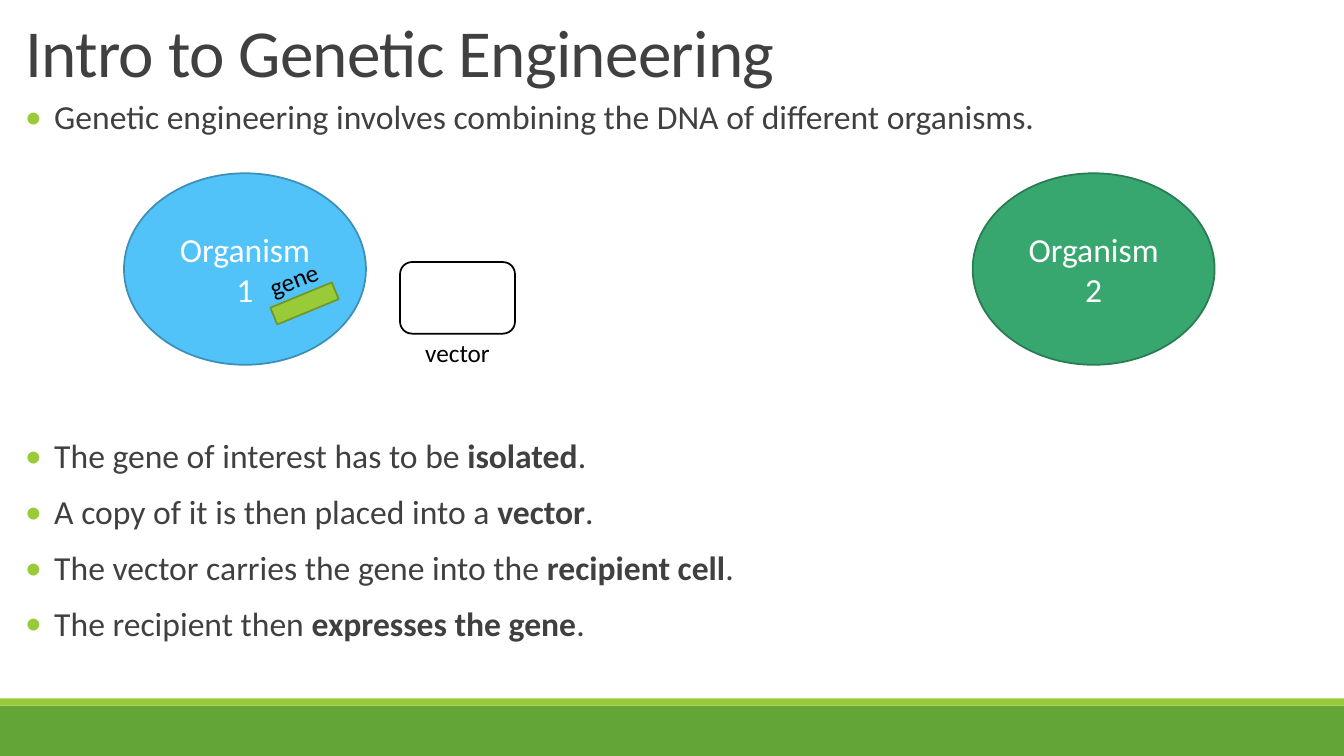
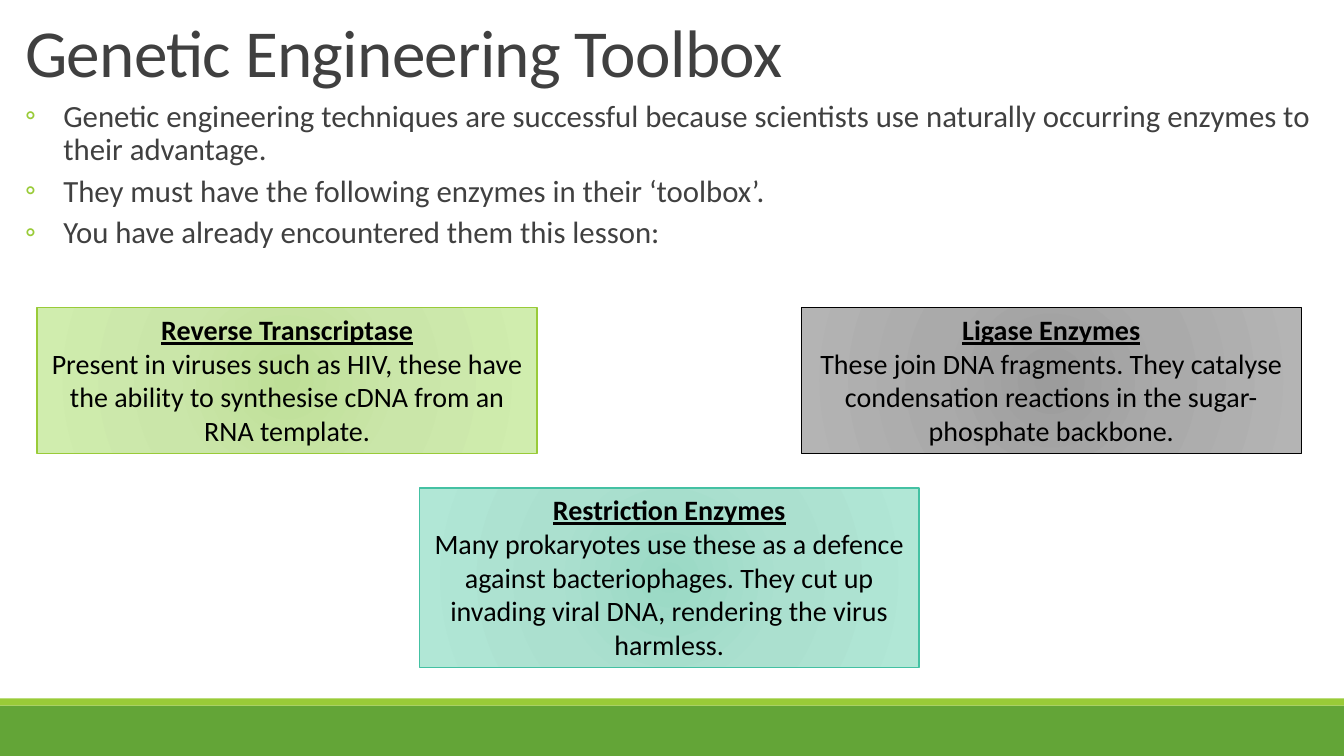
from dataclasses import dataclass

from pptx import Presentation
from pptx.dml.color import RGBColor as RGB
from pptx.enum.shapes import MSO_SHAPE as SHAPE
from pptx.enum.text import MSO_ANCHOR as ANCHOR, MSO_AUTO_SIZE as FIT, PP_ALIGN as ALIGN
from pptx.oxml import parse_xml
from pptx.oxml.ns import nsdecls
from pptx.util import Pt


@dataclass(frozen=True)
class Theme:
    font: str = "Calibri"
    ink: str = "404040"
    black: str = "000000"
    white: str = "FFFFFF"
    lime: str = "99CB38"
    lime_edge: str = "719629"
    green: str = "63A537"
    blue: str = "51C3F9"
    blue_edge: str = "3C90B8"
    emerald: str = "37A76F"
    emerald_edge: str = "297C52"
    teal: str = "44C1A3"
    title_size: int = 48
    body_size: int = 24
    sub_size: int = 22
    card_size: int = 20
    label_size: int = 18


THEME = Theme()
LEFT, WIDTH, BODY_TOP = 10.8, 933.8, 68.4


def add_run(paragraph, text, size, color, bold=False):
    run = paragraph.add_run()
    run.text = text
    run.font.name = THEME.font
    run.font.size = Pt(size)
    run.font.bold = bold
    run.font.color.rgb = RGB.from_string(color)
    return run


def add_box(shapes, kind, box, fill=None, edge=None, weight=1.25):
    shape = shapes.add_shape(kind, *map(Pt, box))
    shape.shadow.inherit = False
    if fill:
        shape.fill.solid()
        shape.fill.fore_color.rgb = RGB.from_string(fill)
    if edge:
        shape.line.color.rgb = RGB.from_string(edge)
        shape.line.width = Pt(weight)
    else:
        shape.line.fill.background()
    return shape


deck = Presentation()
deck.slide_width, deck.slide_height = Pt(960), Pt(540)
title_only = deck.slide_layouts[5]

# Shared title and footer bands
for heading in ("Intro to Genetic Engineering", "Genetic Engineering Toolbox"):
    slide = deck.slides.add_slide(title_only)
    add_box(slide.shapes, SHAPE.RECTANGLE, (0, 504, 960, 36), THEME.green)
    add_box(slide.shapes, SHAPE.RECTANGLE, (0, 498.9, 960, 5.1), THEME.lime)
    title = slide.shapes.title
    title.left, title.top, title.width, title.height = map(Pt, (LEFT, 13.7, WIDTH, 54))
    title.text_frame.auto_size = FIT.NONE
    title.text_frame.vertical_anchor = ANCHOR.MIDDLE
    line = title.text_frame.paragraphs[0]
    line.alignment = ALIGN.LEFT
    line.line_spacing = 0.85
    run = add_run(line, heading, THEME.title_size, THEME.ink)
    run.font._element.set("spc", "-50")

intro, toolbox = deck.slides

# Bullet lists: slide, top, height, size, bullet, indent, space before, after, items
# Every second part of an item is bold
bullet_lists = [
    (intro, BODY_TOP, 40, THEME.body_size, "•", 20.9, 12, 2, [
        ("Genetic engineering involves combining the DNA of different organisms.",),
    ]),
    (intro, 310.5, 170, THEME.body_size, "•", 20.9, 12, 2, [
        ("The gene of interest has to be ", "isolated", "."),
        ("A copy of it is then placed into a ", "vector", "."),
        ("The vector carries the gene into the ", "recipient cell", "."),
        ("The recipient then ", "expresses the gene", "."),
    ]),
    (toolbox, BODY_TOP, 130, THEME.sub_size, "◦", 27.4, 2, 4, [
        ("Genetic engineering techniques are successful because scientists use "
         "naturally occurring enzymes to their advantage.",),
        ("They must have the following enzymes in their ‘toolbox’.",),
        ("You have already encountered them this lesson:",),
    ]),
]
for slide, top, height, size, bullet, indent, before, after, items in bullet_lists:
    frame = slide.shapes.add_textbox(*map(Pt, (LEFT, top, WIDTH, height))).text_frame
    frame.word_wrap = True
    for number, parts in enumerate(items):
        item = frame.add_paragraph() if number else frame.paragraphs[0]
        item.line_spacing = 0.9
        item.space_before, item.space_after = Pt(before), Pt(after)
        props = item._p.get_or_add_pPr()
        props.set("marL", str(Pt(indent)))
        props.set("indent", str(-Pt(indent)))
        props.append(parse_xml(
            f'<a:buClr {nsdecls("a")}><a:srgbClr val="{THEME.lime}"/></a:buClr>'))
        props.append(parse_xml(f'<a:buFont {nsdecls("a")} typeface="{THEME.font}"/>'))
        props.append(parse_xml(f'<a:buChar {nsdecls("a")} char="{bullet}"/>'))
        for index, text in enumerate(parts):
            add_run(item, text, size, THEME.ink, bold=index % 2 == 1)

# Organisms
for name, left, fill, edge in (
    ("Organism 1", 88.6, THEME.blue, THEME.blue_edge),
    ("Organism 2", 694.8, THEME.emerald, THEME.emerald_edge),
):
    organism = add_box(intro.shapes, SHAPE.OVAL, (left, 123.8, 172.8, 136.8), fill, edge)
    organism.text_frame.vertical_anchor = ANCHOR.MIDDLE
    caption = organism.text_frame.paragraphs[0]
    caption.alignment = ALIGN.CENTER
    add_run(caption, name, THEME.body_size, THEME.white)

# Vector and gene, each grouped with its label
for name, kind, box, turn, fill, edge, label_box, label_turn, align in (
    ("vector", SHAPE.ROUNDED_RECTANGLE, (285.8, 187.2, 82.1, 51.1), 0,
     THEME.white, THEME.black, (278.6, 237.6, 96.5, 29), 0, ALIGN.CENTER),
    ("gene", SHAPE.RECTANGLE, (211, 193, 13, 47.5), 67.6,
     THEME.lime, THEME.lime_edge, (184.3, 182.9, 62, 29), 338.7, ALIGN.LEFT),
):
    group = intro.shapes.add_group_shape()
    add_box(group.shapes, kind, box, fill, edge).rotation = turn
    label = group.shapes.add_textbox(*map(Pt, label_box))
    label.rotation = label_turn
    label.text_frame.word_wrap = True
    label.text_frame.auto_size = FIT.SHAPE_TO_FIT_TEXT
    caption = label.text_frame.paragraphs[0]
    caption.alignment = align
    add_run(caption, name, THEME.label_size, THEME.black)

# Enzyme cards, evenly stepped from left to right
CARD_LEFT, CARD_STEP, CARD_WIDTH = 26.6, 272.9, 357.1
enzymes = [
    ("Reverse Transcriptase",
     "Present in viruses such as HIV, these have the ability to synthesise cDNA "
     "from an RNA template.",
     219.6, 104.4, THEME.lime, ("BEDF97", "CAE6A9", "D0EDAE")),
    ("Restriction Enzymes",
     "Many prokaryotes use these as a defence against bacteriophages. They cut up "
     "invading viral DNA, rendering the virus harmless.",
     348.5, 128.2, THEME.teal, ("9AD9C5", "ABE0CF", "B1E7D6")),
    ("Ligase Enzymes",
     "These join DNA fragments. They catalyse condensation reactions in the "
     "sugar-phosphate backbone.",
     219.6, 104.4, THEME.black, ("9C9C9C", "AAAAAA", "B4B4B4")),
]
for column, (name, role, top, height, edge, shades) in enumerate(enzymes):
    card = add_box(toolbox.shapes, SHAPE.RECTANGLE,
                   (CARD_LEFT + column * CARD_STEP, top, CARD_WIDTH, height),
                   edge=edge, weight=1)
    # Radial gradient
    stops = "".join(f'<a:gs pos="{pos}"><a:srgbClr val="{shade}"/></a:gs>'
                    for pos, shade in zip((0, 45000, 100000), shades))
    card.element.spPr.find("{*}prstGeom").addnext(parse_xml(
        f'<a:gradFill {nsdecls("a")} rotWithShape="1"><a:gsLst>{stops}</a:gsLst>'
        '<a:path path="circle"><a:fillToRect l="100000" t="100000" r="100000" '
        'b="100000"/></a:path></a:gradFill>'))
    frame = card.text_frame
    frame.word_wrap = True
    frame.auto_size = FIT.SHAPE_TO_FIT_TEXT
    frame.vertical_anchor = ANCHOR.TOP
    heading, detail = frame.paragraphs[0], frame.add_paragraph()
    heading.alignment = detail.alignment = ALIGN.CENTER
    add_run(heading, name, THEME.card_size, THEME.black, bold=True).font.underline = True
    add_run(detail, role, THEME.card_size, THEME.black)

deck.save("out.pptx")
